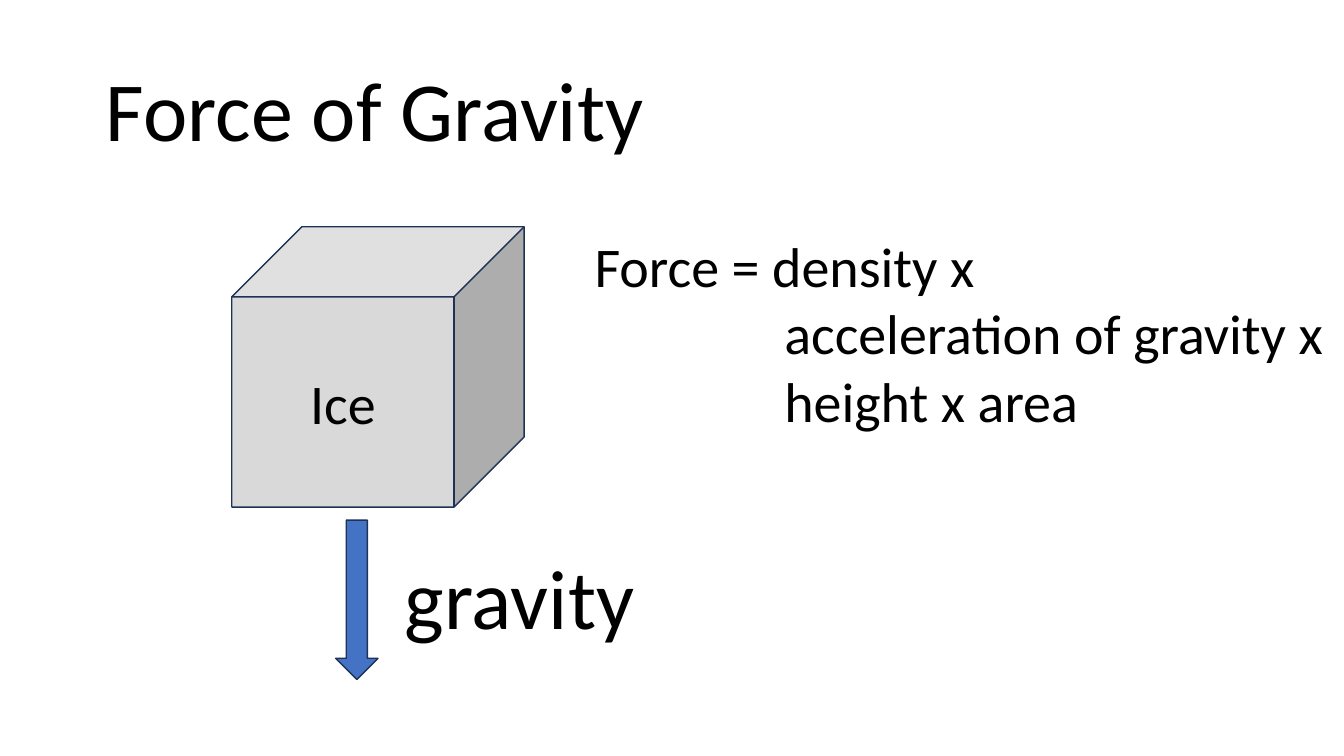
from dataclasses import dataclass

from pptx import Presentation
from pptx.dml.color import RGBColor
from pptx.enum.shapes import MSO_SHAPE
from pptx.enum.text import MSO_ANCHOR, PP_ALIGN
from pptx.util import Pt

LEFT, CENTER = PP_ALIGN.LEFT, PP_ALIGN.CENTER
TOP, MIDDLE = MSO_ANCHOR.TOP, MSO_ANCHOR.MIDDLE
CUBE, DOWN_ARROW = MSO_SHAPE.CUBE, MSO_SHAPE.DOWN_ARROW
TITLE_ONLY = 5

TITLE = "Force of Gravity"
BLOCK_LABEL = "Ice"
ARROW_LABEL = "gravity"
FORMULA = ["Force = density x", "acceleration of gravity x", "height x area"]

# left, top, width, height in points
TITLE_BOX = (68.4, 37.4, 402.5, 80)
ICE_BOX = (165.6, 162, 208.8, 200.2)
ARROW_BOX = (239.8, 371.5, 30.2, 113.8)
ARROW_LABEL_BOX = (282.2, 386, 183, 80)
FORMULA_BOX = (417.6, 162, 542.2, 152.6)
FACTOR_INDENT = 135.6


@dataclass(frozen=True)
class Theme:
    font: str = "Calibri"
    large: int = 60
    medium: int = 40
    text: str = "000000"
    ice: str = "D9D9D9"
    arrow: str = "4472C4"
    outline: str = "1E3256"


THEME = Theme()


def to_points(box):
    return [Pt(v) for v in box]


def write(s, lines, size, align=LEFT, anchor=TOP, wrap=False, indent=0):
    """Fill s with one paragraph a line; indent applies after the first line."""
    tf = s.text_frame
    tf.word_wrap = wrap
    tf.vertical_anchor = anchor
    for i, line in enumerate(lines):
        p = tf.add_paragraph() if i else tf.paragraphs[0]
        p.alignment = align
        if i and indent:
            p._p.get_or_add_pPr().set("marL", str(Pt(indent)))
        r = p.add_run()
        r.text = line
        r.font.name = THEME.font
        r.font.size = Pt(size)
        r.font.color.rgb = RGBColor.from_string(THEME.text)


def add_solid(shapes, kind, box, fill):
    s = shapes.add_shape(kind, *to_points(box))
    s.shadow.inherit = False
    s.fill.solid()
    s.fill.fore_color.rgb = RGBColor.from_string(fill)
    s.line.color.rgb = RGBColor.from_string(THEME.outline)
    s.line.width = Pt(1)
    return s


def main():
    prs = Presentation()
    prs.slide_width, prs.slide_height = Pt(960), Pt(540)
    shapes = prs.slides.add_slide(prs.slide_layouts[TITLE_ONLY]).shapes

    title = shapes.title
    title.left, title.top, title.width, title.height = to_points(TITLE_BOX)
    write(title, [TITLE], THEME.large)

    ice = add_solid(shapes, CUBE, ICE_BOX, THEME.ice)
    write(ice, [BLOCK_LABEL], THEME.medium, align=CENTER, anchor=MIDDLE, wrap=True)
    add_solid(shapes, DOWN_ARROW, ARROW_BOX, THEME.arrow)

    label = shapes.add_textbox(*to_points(ARROW_LABEL_BOX))
    write(label, [ARROW_LABEL], THEME.large)
    formula = shapes.add_textbox(*to_points(FORMULA_BOX))
    write(formula, FORMULA, THEME.medium, indent=FACTOR_INDENT)

    prs.save("out.pptx")


if __name__ == "__main__":
    main()
